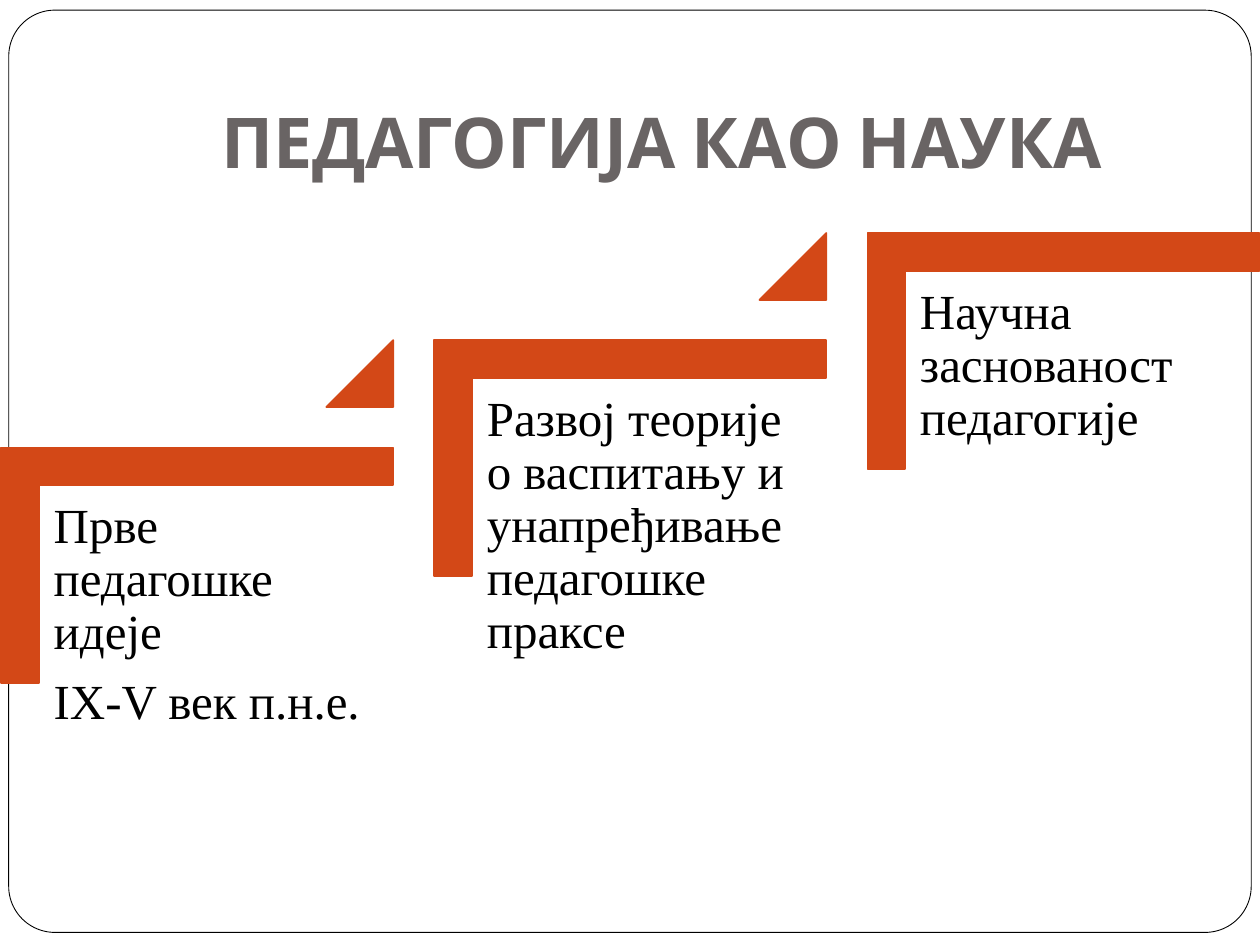
"""Build a slide with three rising steps in the growth of pedagogy."""
from pptx import Presentation
from pptx.dml.color import RGBColor
from pptx.enum.shapes import MSO_SHAPE
from pptx.enum.text import MSO_ANCHOR, MSO_AUTO_SIZE, PP_ALIGN
from pptx.util import Pt

ROUND = MSO_SHAPE.ROUNDED_RECTANGLE
CORNER = MSO_SHAPE.CORNER
WEDGE = MSO_SHAPE.ISOSCELES_TRIANGLE
BOTTOM = MSO_ANCHOR.BOTTOM
CENTER = PP_ALIGN.CENTER
FIXED = MSO_AUTO_SIZE.NONE

TITLE = "ПЕДАГОГИЈА КАО НАУКА"
STEPS = [
    ["Прве педагошке идеје", "IX-V век п.н.е."],
    ["Развој теорије о васпитању и унапређивање педагошке праксе"],
    ["Научна заснованост педагогије"],
]
COLORS = {"title": "696464", "step": "D34817", "text": "000000",
          "frame": "000000", "paper": "FFFFFF"}
RUN, RISE = 247.5, 61.2
CORNER_BOX = (45.4, 211, 134.6, 224)
TEXT_BOX = (22.3, 278, 202.3, 177.1)
WEDGE_BOX = (186.5, 194.4, 38.2, 38.2)


def color(name):
    return RGBColor.from_string(COLORS[name])


def place(box, step=0):
    left, top, width, height = box
    return [Pt(n) for n in (left + step * RUN, top - step * RISE, width, height)]


def draw(slide, kind, spot, fill, line, weight, adjust):
    shape = slide.shapes.add_shape(kind, *spot)
    shape.shadow.inherit = False
    shape.fill.solid()
    shape.fill.fore_color.rgb = color(fill)
    shape.line.color.rgb = color(line)
    shape.line.width = Pt(weight)
    for i, value in enumerate(adjust):
        shape.adjustments[i] = value
    return shape


def inset(frame, left, top, right, bottom):
    frame.word_wrap = True
    frame.auto_size = FIXED
    frame.margin_left, frame.margin_top = Pt(left), Pt(top)
    frame.margin_right, frame.margin_bottom = Pt(right), Pt(bottom)


def write(para, text, font, size, tint, bold=False):
    run = para.add_run()
    run.text = text
    run.font.name, run.font.size, run.font.bold = font, Pt(size), bold
    run.font.color.rgb = color(tint)


def add_title(slide):
    title = slide.shapes.title
    title.left, title.top, title.width, title.height = place((72, 21.6, 612, 90))
    frame = title.text_frame
    inset(frame, 7.2, 3.6, 7.2, 7.2)
    frame.vertical_anchor = BOTTOM
    para = frame.paragraphs[0]
    para.alignment = CENTER
    write(para, TITLE, "Cabin", 40, "title", True)
    border = draw(slide, ROUND, place((5, 5.8, 710, 527)),
                  "paper", "frame", 0.5, [0.05])
    title.element.addprevious(border.element)


def add_step(slide, step, lines):
    corner = draw(slide, CORNER, place(CORNER_BOX, step),
                  "step", "step", 1, [0.16, 0.16])
    corner.rotation = 90
    frame = slide.shapes.add_textbox(*place(TEXT_BOX, step)).text_frame
    inset(frame, 8.4, 8.4, 8.4, 8.4)
    for i, line in enumerate(lines):
        para = frame.add_paragraph() if i else frame.paragraphs[0]
        para.line_spacing = 0.9
        para.space_after = Pt(10)
        write(para, line, "Times New Roman", 28, "text")
    if step < len(STEPS) - 1:
        draw(slide, WEDGE, place(WEDGE_BOX, step), "step", "step", 1, [1])


def main():
    deck = Presentation()
    deck.slide_width, deck.slide_height = Pt(720), Pt(540)
    slide = deck.slides.add_slide(deck.slide_layouts[5])
    add_title(slide)
    for step, lines in enumerate(STEPS):
        add_step(slide, step, lines)
    deck.save("out.pptx")


if __name__ == "__main__":
    main()
